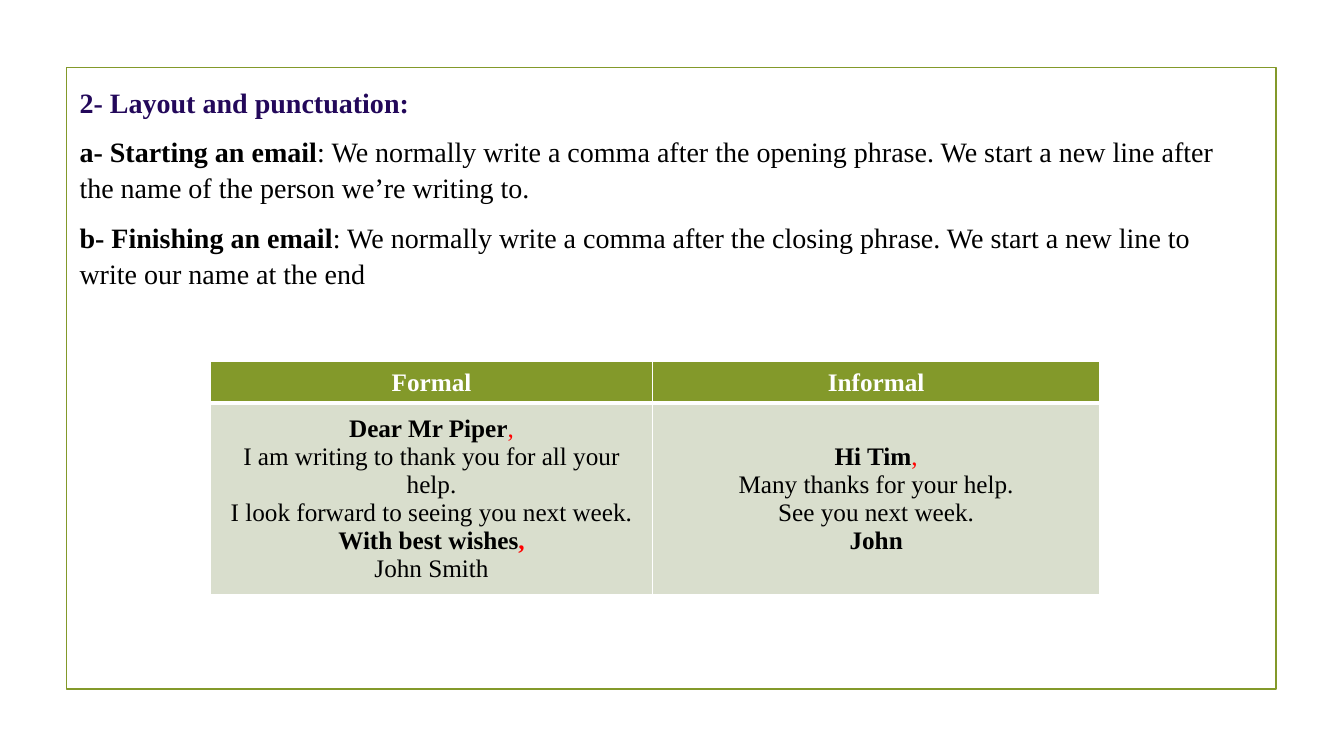
from dataclasses import dataclass

from lxml.etree import SubElement
from pptx import Presentation
from pptx.dml.color import RGBColor as RGB
from pptx.enum.shapes import MSO_SHAPE as SHAPE
from pptx.enum.text import MSO_ANCHOR as ANCHOR, MSO_AUTO_SIZE as AUTO_SIZE, PP_ALIGN as ALIGN
from pptx.oxml.ns import qn
from pptx.util import Inches, Length, Pt


@dataclass(frozen=True)
class Theme:
    font: str = "Times New Roman"
    body_size: int = 20
    table_size: int = 18
    green: str = "83992A"
    pale: str = "D9DECD"
    indigo: str = "23085A"
    black: str = "000000"
    red: str = "FF0000"
    white: str = "FFFFFF"


THEME = Theme()


@dataclass(frozen=True)
class Span:
    text: str
    bold: bool = False
    color: str = THEME.black


@dataclass(frozen=True)
class Box:
    """A place on the slide's grid of 160 columns by 90 rows."""
    col: float
    row: float
    cols: float
    rows: float

    def place(self) -> tuple[Length, ...]:
        return tuple(map(grid, (self.col, self.row, self.cols, self.rows)))


@dataclass(frozen=True)
class Cell:
    lines: list[list[Span]]
    fill: str
    borders: dict[str, int]


def grid(units: float) -> Length:
    """Length of grid units, twelve to the inch."""
    return Inches(units / 12)


FRAME = Box(7.92, 8.04, 144, 74)
INTRO = Box(8.28, 9.24, 140.28, 24.48)
TABLE_COLS = (52.56, 53.28)
TABLE_ROWS = (4.92, 22.56)
TABLE = Box(25.08, 43.08, sum(TABLE_COLS), sum(TABLE_ROWS))

COMMA = Span(",", color=THEME.red)
BOLD_COMMA = Span(",", True, THEME.red)

PARAGRAPHS = [
    [Span("2- Layout and punctuation:", True, THEME.indigo)],
    [Span("a- Starting an email", True),
     Span(": We normally write a comma after the opening phrase. We start a new line "
          "after the name of the person we’re writing to.")],
    [Span("b- Finishing an email", True),
     Span(": We normally write a comma after the closing phrase. We start a new line "
          "to write our name at the end")],
]

FORMAL = [
    [Span("Dear Mr Piper", True), COMMA],
    [Span("I am writing to thank you for all your help.")],
    [Span("I look forward to seeing you next week.")],
    [Span("With best wishes", True), BOLD_COMMA],
    [Span("John Smith")],
]
INFORMAL = [
    [Span("Hi Tim", True), COMMA],
    [Span("Many thanks for your help.")],
    [Span("See you next week.")],
    [Span("John", True)],
]


def header(title: str) -> Cell:
    return Cell([[Span(title, True, THEME.white)]], THEME.green,
                {"lnL": 1, "lnR": 1, "lnT": 1, "lnB": 3})


def example(lines: list[list[Span]]) -> Cell:
    return Cell(lines, THEME.pale, {"lnL": 1, "lnR": 1, "lnB": 1})


CELLS = [[header("Formal"), header("Informal")], [example(FORMAL), example(INFORMAL)]]


def write(p, spans: list[Span], size: int) -> None:
    p.font.name, p.font.size = THEME.font, Pt(size)
    for span in spans:
        r = p.add_run()
        r.text = span.text
        r.font.bold = span.bold
        r.font.color.rgb = RGB.from_string(span.color)


def draw_frame(slide) -> None:
    s = slide.shapes.add_shape(SHAPE.RECTANGLE, *FRAME.place())
    s.shadow.inherit = False
    s.fill.background()
    s.line.color.rgb = RGB.from_string(THEME.green)
    s.line.width = Pt(1.25)


def draw_intro(slide) -> None:
    tf = slide.shapes.add_textbox(*INTRO.place()).text_frame
    tf.word_wrap = True
    tf.auto_size = AUTO_SIZE.SHAPE_TO_FIT_TEXT
    for i, spans in enumerate(PARAGRAPHS):
        p = tf.add_paragraph() if i else tf.paragraphs[0]
        p.line_spacing = 1.08
        p.space_after = Pt(9.4)
        write(p, spans, THEME.body_size)


def draw_cell(target, cell: Cell) -> None:
    tc_pr = target._tc.get_or_add_tcPr()
    for side, width in cell.borders.items():
        line = SubElement(tc_pr, qn(f"a:{side}"), w=str(Pt(width)))
        SubElement(SubElement(line, qn("a:solidFill")), qn("a:srgbClr"), val=THEME.white)
    target.fill.solid()
    target.fill.fore_color.rgb = RGB.from_string(cell.fill)
    target.vertical_anchor = ANCHOR.MIDDLE
    p = target.text_frame.paragraphs[0]
    p.alignment = ALIGN.CENTER
    for i, spans in enumerate(cell.lines):
        if i:
            p.add_line_break()
        write(p, spans, THEME.table_size)


def draw_table(slide) -> None:
    table = slide.shapes.add_table(len(TABLE_ROWS), len(TABLE_COLS), *TABLE.place()).table
    for column, width in zip(table.columns, TABLE_COLS):
        column.width = grid(width)
    for row, height, cells in zip(table.rows, TABLE_ROWS, CELLS):
        row.height = grid(height)
        for target, cell in zip(row.cells, cells):
            draw_cell(target, cell)


def main() -> None:
    prs = Presentation()
    prs.slide_width, prs.slide_height = Inches(13.33), Inches(7.5)
    slide = prs.slides.add_slide(prs.slide_layouts[6])
    draw_frame(slide)
    draw_intro(slide)
    draw_table(slide)
    prs.save("out.pptx")


if __name__ == "__main__":
    main()
